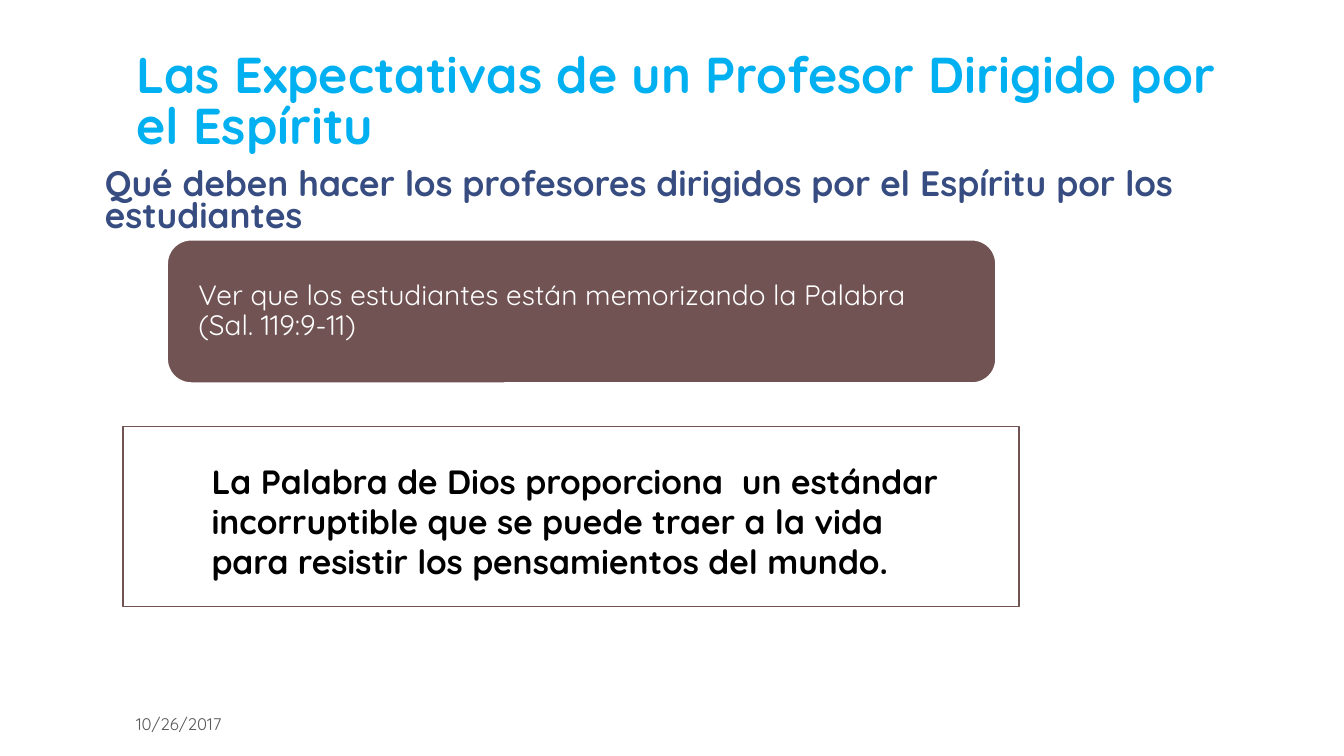
from pptx import Presentation
from pptx.dml.color import RGBColor
from pptx.enum.shapes import MSO_SHAPE as Shape
from pptx.enum.text import MSO_ANCHOR as Anchor, MSO_AUTO_SIZE as AutoSize, PP_ALIGN as Align
from pptx.util import Inches, Pt

SKY = RGBColor(0x00, 0xB0, 0xF0)
NAVY = RGBColor(0x37, 0x4C, 0x81)
BROWN = RGBColor(0x72, 0x53, 0x53)
GREY = RGBColor(0x59, 0x59, 0x59)
WHITE = RGBColor(0xFF, 0xFF, 0xFF)
BLACK = RGBColor(0x00, 0x00, 0x00)

FONT = "Quicksand"
LEFT = 9.15  # left edge shared by title, frame and date, % of slide width
WIDE_INSETS = (0.13, 0.07)
BOX_INSETS = (0.1, 0.05)


def write(sp, text, size=20, color=BLACK, bold=False, spacing=1.0,
          anchor=Anchor.TOP, insets=WIDE_INSETS):
    """Put one formatted paragraph in a shape; insets are (side, top) inches."""
    tf = sp.text_frame
    tf.word_wrap = True
    tf.auto_size = AutoSize.NONE
    tf.vertical_anchor = anchor
    tf.margin_left = tf.margin_right = Inches(insets[0])
    tf.margin_top = tf.margin_bottom = Inches(insets[1])
    p = tf.paragraphs[0]
    p.alignment = Align.LEFT
    p.line_spacing = spacing
    r = p.add_run()
    r.text = text
    r.font.name = FONT
    r.font.size = Pt(size)
    r.font.bold = bold
    r.font.color.rgb = color


class SlideBuilder:
    """Places elements by percentages of the slide's width and height."""

    def __init__(self, prs):
        self.prs = prs
        self.s = prs.slides.add_slide(prs.slide_layouts[5])

    def area(self, x, y, w, h):
        width, height = self.prs.slide_width, self.prs.slide_height
        return [int(share * full / 100)
                for share, full in zip((x, y, w, h), (width, height) * 2)]

    def title(self, box, text, **fmt):
        sp = self.s.shapes.title
        sp.left, sp.top, sp.width, sp.height = self.area(*box)
        write(sp, text, **fmt)

    def text(self, box, text, **fmt):
        write(self.s.shapes.add_textbox(*self.area(*box)), text, **fmt)

    def panel(self, kind, box, fill, line):
        sp = self.s.shapes.add_shape(kind, *self.area(*box))
        sp.shadow.inherit = False
        sp.fill.solid()
        sp.fill.fore_color.rgb = fill
        sp.line.color.rgb = line
        sp.line.width = Pt(1)
        return sp


def main():
    prs = Presentation()
    prs.slide_width, prs.slide_height = Inches(13.33), Inches(7.5)
    slide = SlideBuilder(prs)

    # Headings
    slide.title((LEFT, 1.07, 83.33, 20.4),
                "Las Expectativas de un Profesor Dirigido por el Espíritu",
                size=36, color=SKY, bold=True, spacing=0.85, anchor=Anchor.BOTTOM)
    slide.text((6.83, 21.73, 90.6, 10.4),
               "Qué deben hacer los profesores dirigidos por el Espíritu por los estudiantes",
               size=25.2, color=NAVY, bold=True, spacing=0.75)

    # Expectation on its rounded panel, above the framed explanation
    slide.panel(Shape.RECTANGLE, (LEFT, 56.4, 66.68, 23.87), WHITE, BROWN)
    expectation = slide.panel(Shape.ROUNDED_RECTANGLE, (12.45, 31.73, 61.65, 18.93),
                              BROWN, WHITE)
    write(expectation, "Ver que los estudiantes están memorizando la Palabra (Sal. 119:9-11)",
          color=WHITE, spacing=0.9, anchor=Anchor.MIDDLE, insets=(0.24, 0))
    slide.text((15, 60.27, 57.53, 17.47),
               "La Palabra de Dios proporciona  un estándar incorruptible que se puede "
               "traer a la vida para resistir los pensamientos del mundo.",
               size=24, bold=True, insets=BOX_INSETS)

    # Date
    slide.text((LEFT, 93.33, 22.5, 4.67), "10/26/2017",
               size=12, color=GREY, anchor=Anchor.BOTTOM)

    prs.save("out.pptx")


if __name__ == "__main__":
    main()
